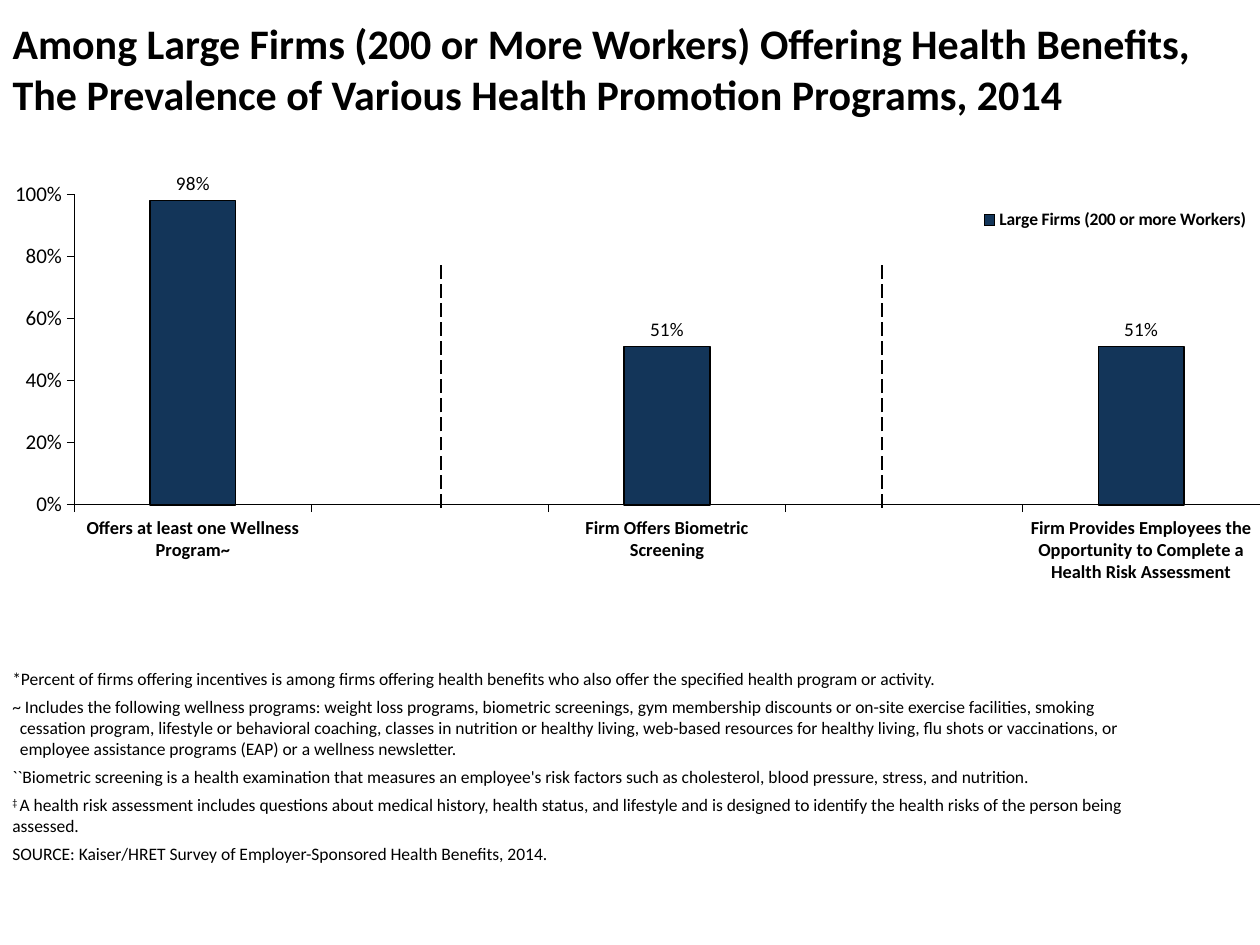
import pptx
import pptx.chart.data
import pptx.dml.color
import pptx.enum.chart
import pptx.enum.dml
import pptx.enum.shapes
import pptx.enum.text
import pptx.oxml
import pptx.oxml.ns
import pptx.util
from pptx.util import Inches, Pt

THEME = {
    "font": "Calibri",
    "ink": pptx.dml.color.RGBColor.from_string("000000"),
    "bar": pptx.dml.color.RGBColor.from_string("133559"),
    "title": 24, "value": 12, "label": 11, "group": 10.5, "legend": 10, "note": 10,
}
TITLE = ("Among Large Firms (200 or More Workers) Offering Health Benefits, "
         "The Prevalence of Various Health Promotion Programs, 2014")
SERIES = "Large Firms (200 or more Workers)"
DATA = [
    ("Offers at least one Wellness Program~", 0.98),
    ("", None),
    ("Firm Offers Biometric Screening", 0.51),
    ("", None),
    ("Firm Provides Employees the Opportunity to Complete a Health Risk Assessment", 0.51),
]
NOTES = [
    (0, "", "*Percent of firms offering incentives is among firms offering health benefits "
            "who also offer the specified health program or activity."),
    (0.06, "", "~ Includes the following wellness programs: weight loss programs, biometric "
               "screenings, gym membership discounts or on-site exercise facilities, smoking "
               "cessation program, lifestyle or behavioral coaching, classes in nutrition or "
               "healthy living, web-based resources for healthy living, flu shots or "
               "vaccinations, or employee assistance programs (EAP) or a wellness newsletter."),
    (0.06, "", "``Biometric screening is a health examination that measures an employee's risk "
               "factors such as cholesterol, blood pressure, stress, and nutrition."),
    (0, "‡ ", "A health risk assessment includes questions about medical history, health "
              "status, and lifestyle and is designed to identify the health risks of the "
              "person being assessed."),
    (0, "", "SOURCE: Kaiser/HRET Survey of Employer-Sponsored Health Benefits, 2014."),
]
RULES = (3.5, 7)


def style(font, size, bold=False):
    font.name = THEME["font"]
    font.size = Pt(size)
    font.bold = bold
    font.color.rgb = THEME["ink"]


def add_run(para, text, size, bold=False):
    run = para.add_run()
    run.text = text
    style(run.font, size, bold)
    return run


def ink_line(line, width):
    line.color.rgb = THEME["ink"]
    line.width = Pt(width)


def layout(box, inner=False):
    target = '<c:layoutTarget val="inner"/>' if inner else ""
    modes = '<c:xMode val="edge"/><c:yMode val="edge"/>'
    sizes = "".join(f'<c:{key} val="{val}"/>' for key, val in zip("xywh", box))
    return pptx.oxml.parse_xml(
        f'<c:layout {pptx.oxml.ns.nsdecls("c")}><c:manualLayout>{target}{modes}{sizes}'
        "</c:manualLayout></c:layout>")


def add_title(slide):
    title = slide.shapes.title
    title.left, title.top, title.width, title.height = 0, 0, Inches(10), Inches(1.08)
    frame = title.text_frame
    frame.word_wrap = True
    frame.auto_size = pptx.enum.text.MSO_AUTO_SIZE.NONE
    frame.vertical_anchor = pptx.enum.text.MSO_ANCHOR.MIDDLE
    para = frame.paragraphs[0]
    para.alignment = pptx.enum.text.PP_ALIGN.LEFT
    add_run(para, TITLE, THEME["title"], True)


def add_bars(slide):
    data = pptx.chart.data.CategoryChartData(number_format="0%")
    data.categories = [name for name, share in DATA]
    data.add_series(SERIES, [share for name, share in DATA])
    chart = slide.shapes.add_chart(
        pptx.enum.chart.XL_CHART_TYPE.COLUMN_CLUSTERED,
        0, Inches(1.27), Inches(10), Inches(4.33), data).chart
    chart.has_title = False
    style(chart.font, THEME["group"], True)

    plot = chart.plots[0]
    plot.gap_width, plot.overlap = 177, -30
    plot.vary_by_categories = False
    bars = plot.series[0]
    bars.format.fill.solid()
    bars.format.fill.fore_color.rgb = THEME["bar"]
    ink_line(bars.format.line, 0.93)
    labels = bars.data_labels
    labels.show_value = True
    labels.number_format, labels.number_format_is_linked = "0%", False
    labels.position = pptx.enum.chart.XL_LABEL_POSITION.OUTSIDE_END
    style(labels.font, THEME["label"])

    value = chart.value_axis
    value.minimum_scale, value.maximum_scale, value.major_unit = 0, 1, 0.2
    value.has_major_gridlines = False
    value.tick_labels.number_format = "0%"
    value.tick_labels.number_format_is_linked = False
    for axis, size, bold in ((value, THEME["value"], False),
                             (chart.category_axis, THEME["group"], True)):
        axis.major_tick_mark = pptx.enum.chart.XL_TICK_MARK.OUTSIDE
        style(axis.tick_labels.font, size, bold)
        ink_line(axis.format.line, 0.23)

    chart.has_legend = True
    legend = chart.legend
    legend.position = pptx.enum.chart.XL_LEGEND_POSITION.RIGHT
    legend.include_in_layout = False
    style(legend.font, THEME["legend"], True)
    tag = pptx.oxml.ns.qn
    legend._element.find(tag("c:overlay")).addprevious(layout((0.77, 0.08, 0.23, 0.06)))
    area = chart._chartSpace.chart.plotArea
    for old in area.findall(tag("c:layout")):
        area.remove(old)
    area.insert(0, layout((0.059, 0.063, 0.941, 0.569), True))


def add_notes(slide):
    box = slide.shapes.add_textbox(0, Inches(5.25), Inches(9.33), Inches(1.67))
    frame = box.text_frame
    frame.word_wrap = True
    frame.auto_size = pptx.enum.text.MSO_AUTO_SIZE.SHAPE_TO_FIT_TEXT
    for i, (indent, mark, text) in enumerate(NOTES):
        para = frame.add_paragraph() if i else frame.paragraphs[0]
        para.space_after = Pt(4)
        if indent:
            props = para._p.get_or_add_pPr()
            props.set("marL", str(Inches(indent)))
            props.set("indent", str(-Inches(indent)))
        if mark:
            run = add_run(para, mark, THEME["note"])
            run._r.get_or_add_rPr().set("baseline", "30000")
        add_run(para, text, THEME["note"])


def add_rules(slide):
    for x in RULES:
        rule = slide.shapes.add_connector(
            pptx.enum.shapes.MSO_CONNECTOR.STRAIGHT,
            Inches(x), Inches(4.03), Inches(x), Inches(2.1))
        ink_line(rule.line, 1)
        rule.line.dash_style = pptx.enum.dml.MSO_LINE.LONG_DASH
        rule._element.spPr.append(
            pptx.oxml.parse_xml(f'<a:effectLst {pptx.oxml.ns.nsdecls("a")}/>'))


def main():
    deck = pptx.Presentation()
    deck.slide_width, deck.slide_height = Inches(10), Inches(7.5)
    slide = deck.slides.add_slide(deck.slide_layouts[5])
    for add in (add_title, add_bars, add_notes, add_rules):
        add(slide)
    deck.save("out.pptx")


if __name__ == "__main__":
    main()
